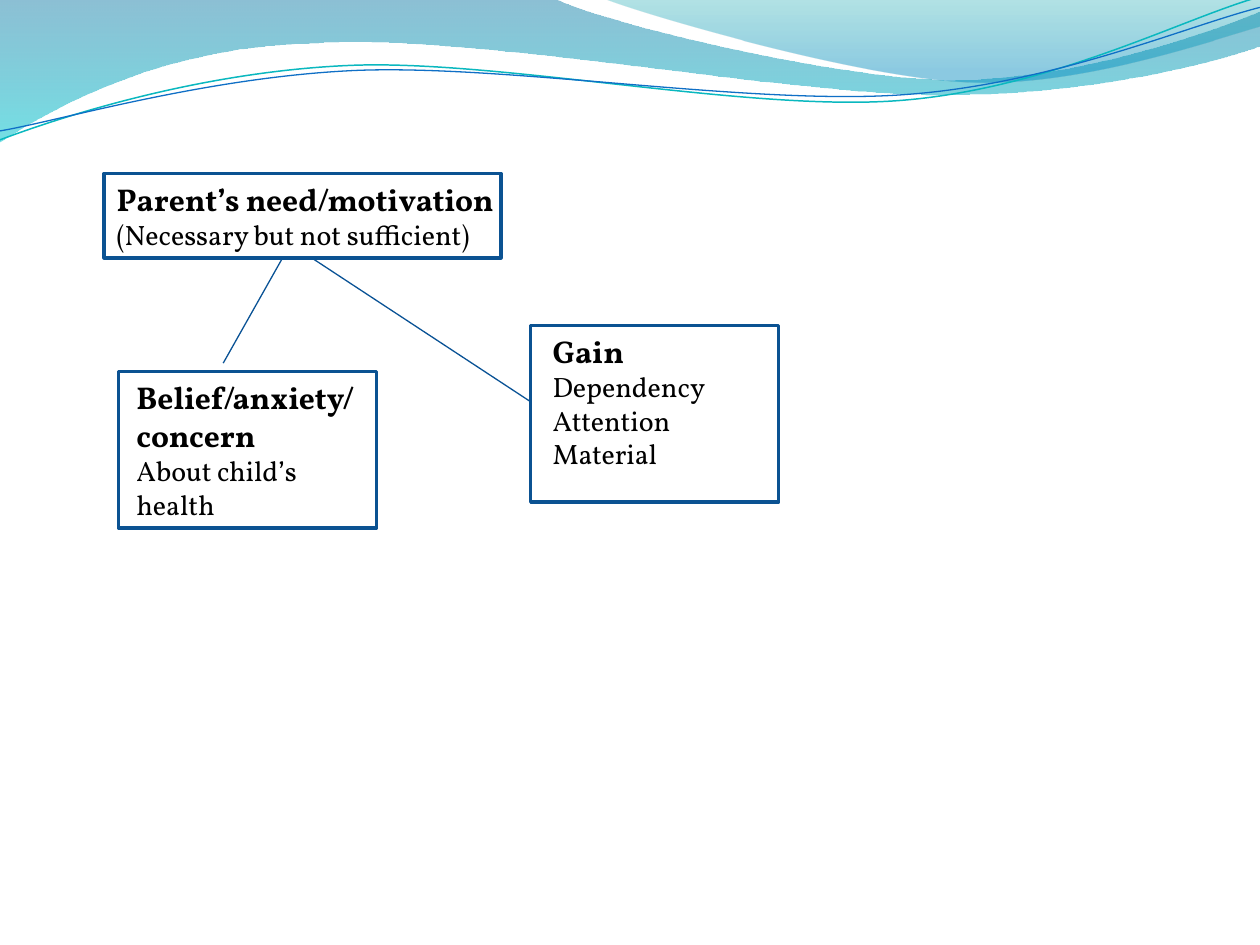
from lxml.etree import SubElement
from pptx import Presentation
from pptx.dml.color import RGBColor
from pptx.enum.shapes import MSO_CONNECTOR, MSO_SHAPE
from pptx.enum.text import MSO_AUTO_SIZE
from pptx.oxml.ns import qn
from pptx.util import Cm, Pt

BLACK = RGBColor(0x00, 0x00, 0x00)
BOX_BLUE = RGBColor(0x0B, 0x52, 0x92)
LINK_BLUE = RGBColor(0x09, 0x52, 0x95)
DEEP_BLUE = RGBColor(0x00, 0x74, 0xA1)
AQUA = RGBColor(0x00, 0xC6, 0xCF)
TEAL = RGBColor(0x00, 0xA1, 0xA9)
SKY = RGBColor(0x00, 0x8B, 0xBF)
TEAL_LINE = RGBColor(0x0A, 0xB8, 0xBF)
BLUE_LINE = RGBColor(0x0F, 0x6F, 0xC6)


class SlideBuilder:
    font = "Vollkorn"
    head_size = Pt(18)
    body_size = Pt(16)

    def __init__(self, slide):
        self.shapes = slide.shapes

    def outline(self, start, segments, close):
        fb = self.shapes.build_freeform(Cm(start[0]), Cm(start[1]))
        fb.add_line_segments([(Cm(x), Cm(y)) for seg in segments for x, y in seg], close=close)
        sp = fb.convert_to_shape()
        sp.shadow.inherit = False
        steps = iter(list(sp._element.iter(qn("a:lnTo"))))
        for seg in segments:
            parts = [next(steps) for _ in seg]
            if len(parts) == 3:
                bezier = SubElement(parts[0].getparent(), qn("a:cubicBezTo"))
                parts[0].addprevious(bezier)
                for part in parts:
                    bezier.append(part[0])
                    part.getparent().remove(part)
        return sp

    def wave(self, start, segments, stops):
        sp = self.outline(start, segments, True)
        sp.line.fill.background()
        sp.fill.gradient()
        sp.fill.gradient_angle = 270
        for stop, (position, color, _) in zip(sp.fill.gradient_stops, stops):
            stop.position = position
            stop.color.rgb = color
        grad = sp._element.spPr.find(qn("a:gradFill"))
        for clr, (_, _, opacity) in zip(grad.iter(qn("a:srgbClr")), stops):
            SubElement(clr, qn("a:alpha")).set("val", str(opacity * 1000))

    def curve(self, start, segments, color, width):
        sp = self.outline(start, segments, False)
        sp.fill.background()
        sp.line.color.rgb = color
        sp.line.width = Pt(width)

    def text(self, x, y, w, h, heads, bodies, top=0.13):
        tf = self.shapes.add_textbox(Cm(x), Cm(y), Cm(w), Cm(h)).text_frame
        tf.word_wrap = True
        tf.auto_size = MSO_AUTO_SIZE.SHAPE_TO_FIT_TEXT
        tf.margin_top = Cm(top)
        for i, line in enumerate(heads + bodies):
            p = tf.add_paragraph() if i else tf.paragraphs[0]
            p.text = line
            p.font.name = self.font
            p.font.bold = i < len(heads)
            p.font.size = self.head_size if i < len(heads) else self.body_size
            p.font.color.rgb = BLACK

    def box(self, x, y, w, h):
        sp = self.shapes.add_shape(MSO_SHAPE.RECTANGLE, Cm(x), Cm(y), Cm(w), Cm(h))
        sp.shadow.inherit = False
        sp.fill.background()
        sp.line.color.rgb = BOX_BLUE
        sp.line.width = Pt(2)

    def link(self, x1, y1, x2, y2):
        cn = self.shapes.add_connector(MSO_CONNECTOR.STRAIGHT, Cm(x1), Cm(y1), Cm(x2), Cm(y2))
        cn.line.color.rgb = LINK_BLUE
        cn.line.width = Pt(0.75)
        SubElement(cn._element.spPr, qn("a:effectLst"))


def main():
    prs = Presentation()
    prs.slide_width, prs.slide_height = Cm(25.4), Cm(19.05)
    s = SlideBuilder(prs.slides.add_slide(prs.slide_layouts[6]))

    s.wave((0, 0), [
        [(11.18, -0.03)],
        [(12.09, 0.43), (16.87, 1.6), (19.25, 1.6)],
        [(21.67, 1.6), (24.33, 0.66), (25.4, 0.23)],
        [(25.43, 0.91)],
        [(24.97, 1.12), (22.1, 1.93), (18.95, 1.91)],
        [(15.8, 1.91), (9.7, 0.71), (6.53, 0.86)],
        [(3.28, 0.91), (1.17, 2.11), (-0.03, 2.87)],
    ], [(0, DEEP_BLUE, 45), (1, AQUA, 55)])
    s.wave((12.17, -0.03), [
        [(12.93, 0.28), (17.32, 1.57), (19.53, 1.65)],
        [(21.74, 1.75), (24.41, 0.81), (25.4, 0.53)],
        [(25.4, 0)],
    ], [(0, TEAL, 30), (0.8, SKY, 45)])
    s.curve((0, 2.82), [
        [(1.22, 2.36), (4.01, 1.45), (7.04, 1.32)],
        [(10.03, 1.19), (15.06, 2.26), (18.11, 2.03)],
        [(21.16, 1.8), (23.83, 0.38), (25.35, -0.05)],
    ], TEAL_LINE, 0.85)
    s.curve((0, 2.64), [
        [(1.19, 2.44), (4.17, 1.55), (7.19, 1.42)],
        [(10.24, 1.3), (15.16, 2.13), (18.21, 1.91)],
        [(21.23, 1.7), (23.9, 0.53), (25.4, 0.15)],
    ], BLUE_LINE, 0.75)

    s.text(2.1, 3.5, 9.19, 1.7,
           ["Parent’s need/motivation"], ["(Necessary but not sufficient)"])
    s.text(2.5, 6.73, 5.21, 3.94,
           ["Belief/anxiety/", "concern"], ["About child’s health"], top=0.89)
    s.text(10.89, 6.56, 4.42, 3.07,
           ["Gain"], ["Dependency", "Attention", "Material"])

    s.box(2.1, 3.5, 8, 1.7)
    s.box(10.7, 6.56, 5, 3.56)
    s.box(2.39, 7.49, 5.2, 3.16)

    s.link(5.69, 5.21, 4.5, 7.32)
    s.link(6.3, 5.21, 10.7, 8.1)

    prs.save("out.pptx")


if __name__ == "__main__":
    main()
